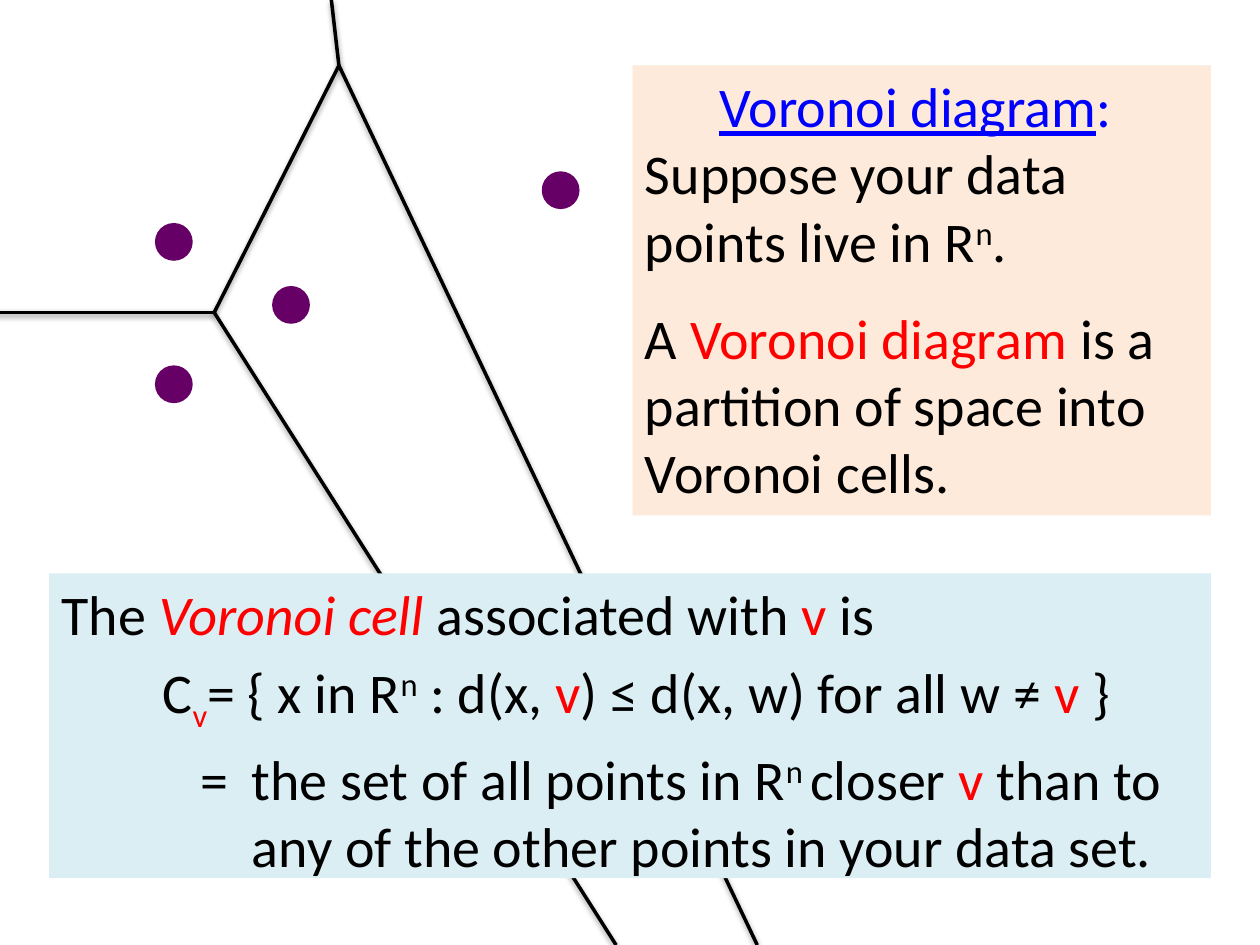
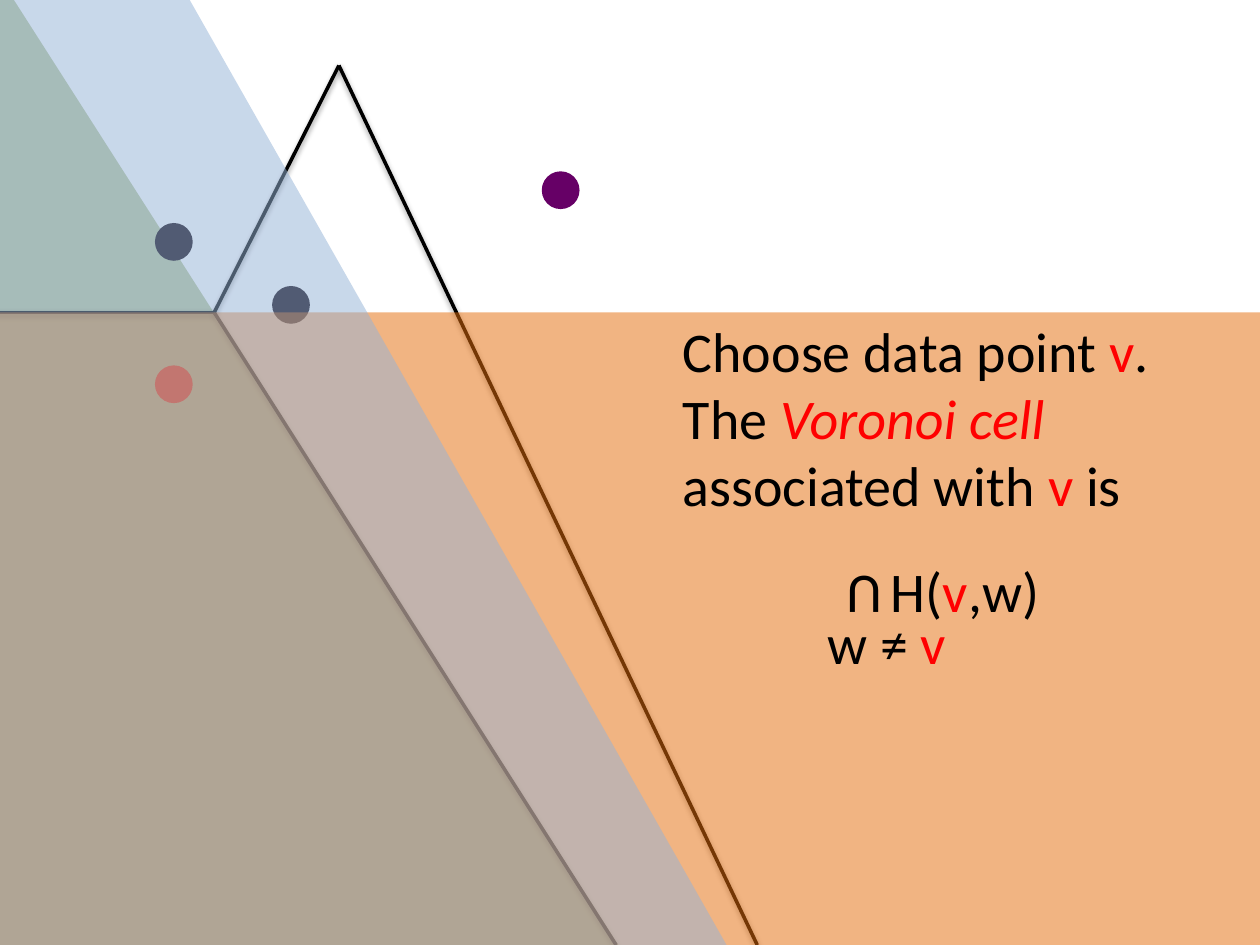
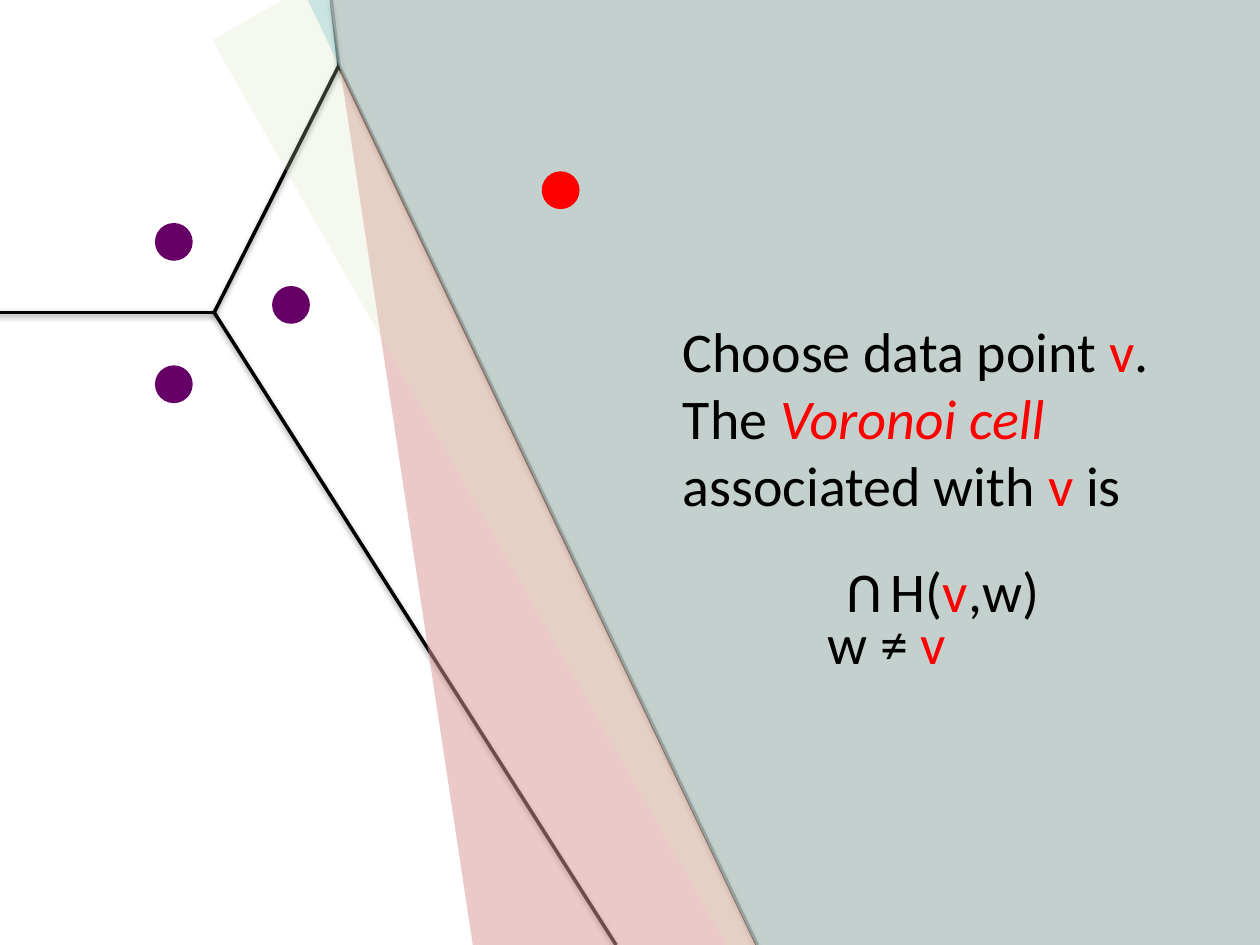
from collections import namedtuple

from lxml import etree
from pptx import Presentation
from pptx import util as u
from pptx.dml.color import RGBColor
from pptx.enum import shapes, text
from pptx.oxml.ns import qn

# Slide grid: 10 columns by 7.5 rows of square cells
COLUMNS, ROWS = 10, 7.5
CELL = u.Inches(1)
Box = namedtuple("Box", "left top width height")
SLIDE_BOX = Box(0, 0, COLUMNS, ROWS)

# Colours
BLACK = RGBColor(0x00, 0x00, 0x00)
RED = RGBColor(0xFF, 0x00, 0x00)
BLUE = RGBColor(0x00, 0x00, 0xFF)
PURPLE = RGBColor(0x66, 0x00, 0x66)
DARK_PURPLE = RGBColor(0x0C, 0x00, 0x0C)
PEACH = RGBColor(0xFD, 0xEA, 0xDA)
PALE_BLUE = RGBColor(0xDB, 0xEE, 0xF4)
OLIVE = RGBColor(0x77, 0x93, 0x3C)
ORANGE = RGBColor(0xE4, 0x6C, 0x0A)
SKY = RGBColor(0x95, 0xB3, 0xD7)
ROSE = RGBColor(0xD9, 0x96, 0x94)
AQUA = RGBColor(0x93, 0xCD, 0xDD)
LIME = RGBColor(0xD7, 0xE4, 0xBD)

# Text formats
BASE_FONT = {"name": "Calibri", "size": u.Pt(32)}
CENTER = {"alignment": text.PP_ALIGN.CENTER}
TERM = {"color": RED}
CELL_TERM = {"color": RED, "italic": True}
HEADING = {"color": BLUE, "underline": True}
SUPER = {"baseline": 30}
RED_SUB = {"color": RED, "baseline": -25}
V = ("v", TERM)

# Voronoi diagram: data points (dot corners), vertices and edges
DOT_SIZE = 0.3
LOWER_LEFT, MIDDLE, UPPER_LEFT, RIGHT = (1.23, 2.9), (2.16, 2.27), (1.23, 1.77), (4.3, 1.36)
DATA_POINTS = (LOWER_LEFT, MIDDLE, UPPER_LEFT, RIGHT)
LEFT_VERTEX, TOP_VERTEX = (1.7, 2.48), (2.69, 0.52)
EDGES = (
    ((4.89, ROWS), LEFT_VERTEX),
    (LEFT_VERTEX, TOP_VERTEX),
    (TOP_VERTEX, (6.01, ROWS)),
    (LEFT_VERTEX, (-0.12, 2.48)),
)
TOP_EDGE = (TOP_VERTEX, (2.63, 0))


def cells(*counts):
    return [round(count * CELL) for count in counts]


def set_values(target, values):
    for name, value in values.items():
        setattr(target, name, value)


def add_filled(slide, kind, box, color, opacity=100):
    shape = slide.shapes.add_shape(kind, *cells(*box))
    shape.shadow.inherit = False
    shape.line.fill.background()
    shape.fill.solid()
    shape.fill.fore_color.rgb = color
    if opacity < 100:
        srgb = shape.fill._xPr.find(qn("a:solidFill"))[0]
        etree.SubElement(srgb, qn("a:alpha")).set("val", str(opacity * 1000))
    return shape


def add_run(paragraph, words, style):
    run = paragraph.add_run()
    run.text = words
    values = dict(BASE_FONT, **style)
    run.font.color.rgb = values.pop("color", BLACK)
    baseline = values.pop("baseline", 0)
    if baseline:
        run._r.get_or_add_rPr().set("baseline", str(baseline * 1000))
    set_values(run.font, values)


def write(shape, paragraphs, frame_values=None):
    """Each paragraph is (format values, runs); a run is words or (words, style)."""
    frame = shape.text_frame
    set_values(frame, {"word_wrap": True, "vertical_anchor": text.MSO_ANCHOR.TOP,
                       **(frame_values or {})})
    for index, (values, runs) in enumerate(paragraphs):
        paragraph = frame.paragraphs[0] if index == 0 else frame.add_paragraph()
        values = {"alignment": text.PP_ALIGN.LEFT, **values}
        margin, indent = values.pop("margin", 0), values.pop("indent", 0)
        set_values(paragraph, values)
        if margin:
            properties = paragraph._p.get_or_add_pPr()
            properties.set("marL", str(u.Inches(margin)))
            properties.set("indent", str(u.Inches(indent)))
        for run in runs:
            add_run(paragraph, *((run, {}) if isinstance(run, str) else run))


def add_text(slide, box, paragraphs, frame_values=None):
    shape = slide.shapes.add_textbox(*cells(*box))
    write(shape, paragraphs, frame_values)
    return shape


def add_dots(slide, box, colors):
    """Data points, as a mapping from dot corner to colour."""
    for (left, top), color in colors.items():
        dot = Box(box.left + left, box.top + top, DOT_SIZE, DOT_SIZE)
        add_filled(slide, shapes.MSO_SHAPE.OVAL, dot, color)


def add_edges(slide, box, edges):
    """Cell borders; they keep the soft shadow of the theme."""
    for start, end in edges:
        ends = [offset + origin for point in (start, end)
                for offset, origin in zip(point, (box.left, box.top))]
        edge = slide.shapes.add_connector(shapes.MSO_CONNECTOR.STRAIGHT, *cells(*ends))
        edge.line.color.rgb = BLACK
        edge.line.width = u.Pt(2)


def add_half_plane(slide, box, color, rotation=0, opacity=51):
    plane = add_filled(slide, shapes.MSO_SHAPE.RECTANGLE, box, color, opacity)
    plane.rotation = rotation


def add_panel(slide, box, color, paragraphs):
    write(add_filled(slide, shapes.MSO_SHAPE.RECTANGLE, box, color), paragraphs)


def add_cell_formula(slide, box, condition_width):
    """Cell as an intersection of half planes."""
    add_text(slide, box, [
        ({}, ["Choose data point ", V, "."]),
        ({}, ["The ", ("Voronoi cell ", CELL_TERM), "associated with ", V, " is"]),
        ({**CENTER, "space_before": u.Pt(22)}, ["H(", V, ",w)"]),
    ], {"margin_top": u.Inches(0.59)})
    # A turned U is the intersection sign
    sign = Box(box.left + 1.44, box.top + 2.51, 0.34, 0.64)
    add_text(slide, sign, [({}, ["U"])]).rotation = 180
    condition = Box(box.left + 1.15, box.top + 2.86, condition_width, 0.64)
    add_text(slide, condition, [({}, ["w ≠ ", V])])


def build_definition(slide, box):
    add_dots(slide, box, dict.fromkeys(DATA_POINTS, PURPLE))
    add_edges(slide, box, EDGES + (TOP_EDGE,))
    add_panel(slide, Box(5.02, 0.52, 4.59, 3.57), PEACH, [
        (CENTER, [("Voronoi diagram", HEADING), (": ", {"color": BLUE})]),
        ({}, ["Suppose your data points live in R", ("n", SUPER), "."]),
        ({"space_before": u.Pt(17)},
         ["A ", ("Voronoi diagram", TERM), " is a partition of space into Voronoi cells."]),
    ])
    gap = {"space_before": u.Pt(6)}
    add_panel(slide, Box(0.39, 4.55, 9.22, 2.42), PALE_BLUE, [
        ({}, ["The ", ("Voronoi cell ", CELL_TERM), "associated with ", V, " is"]),
        ({**CENTER, **gap},
         [" C", ("v", RED_SUB), "= { x in R", ("n", SUPER), " : d(x, ", V,
          ") ≤ d(x, w) for all w ≠ ", ("v ", TERM), "}"]),
        ({**gap, "margin": 1.51, "indent": -0.41},
         ["=\tthe set of all points in R", ("n ", SUPER), "closer ", V, " than to"]),
        ({"margin": 1.51}, ["any of the other points in your data set."]),
    ])


def build_lower_left_cell(slide, box):
    add_half_plane(slide, Box(-4.22, 2.82, 9.87, 4.38), OLIVE, 57.4)
    add_dots(slide, box, {LOWER_LEFT: RED, MIDDLE: DARK_PURPLE,
                          UPPER_LEFT: DARK_PURPLE, RIGHT: PURPLE})
    add_edges(slide, box, EDGES)
    add_half_plane(slide, Box(-0.12, 2.48, 10.15, 5.05), ORANGE)
    add_half_plane(slide, Box(-3.78, 2.41, 10.37, 5.05), SKY, 60.4)
    add_cell_formula(slide, Box(5.32, 1.92, 4.68, 3.64), 1.82)


def build_right_cell(slide, box):
    add_dots(slide, box, dict.fromkeys(DATA_POINTS[:-1], PURPLE))
    add_edges(slide, box, EDGES + (TOP_EDGE,))
    add_half_plane(slide, Box(2.1, 0.14, 9.82, 7.52), ROSE, 81.4)
    add_half_plane(slide, Box(2.22, -0.81, 11.11, 7.23), AQUA, 64.6)
    add_half_plane(slide, Box(2.41, -0.93, 10.77, 7.94), LIME, 60.4, 23)
    add_cell_formula(slide, Box(5.32, 1.92, 4.68, 3.64), 2.79)
    add_dots(slide, box, {RIGHT: RED})


def main():
    presentation = Presentation()
    presentation.slide_width, presentation.slide_height = cells(COLUMNS, ROWS)
    blank_layout = presentation.slide_layouts[6]
    for build in (build_definition, build_lower_left_cell, build_right_cell):
        build(presentation.slides.add_slide(blank_layout), SLIDE_BOX)
    presentation.save("out.pptx")


if __name__ == "__main__":
    main()
